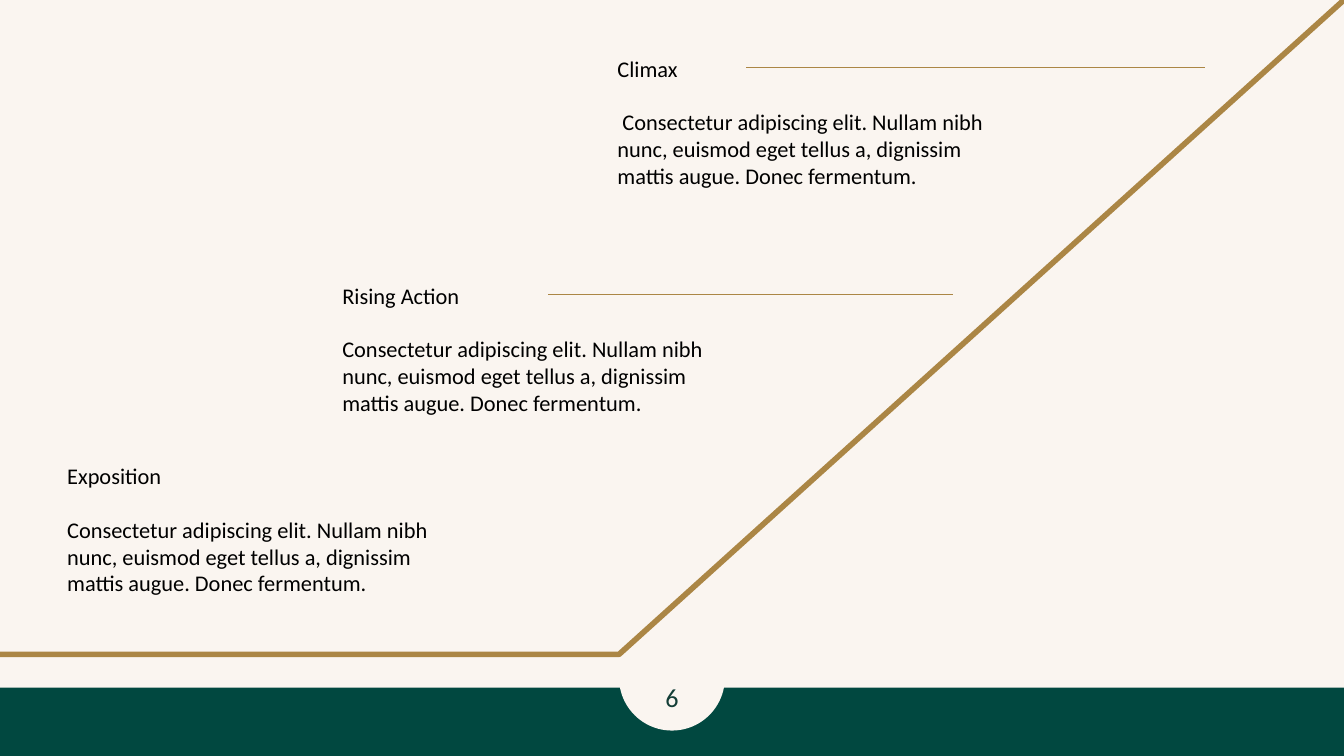
from dataclasses import dataclass
from typing import Optional

from pptx import Presentation
from pptx.dml.color import RGBColor
from pptx.enum.shapes import MSO_CONNECTOR as Connector, MSO_SHAPE as Preset
from pptx.enum.text import MSO_ANCHOR as Anchor, PP_ALIGN as Align
from pptx.oxml.ns import qn
from pptx.slide import Slide
from pptx.util import Cm, Pt
from lxml.etree import SubElement


@dataclass(frozen=True)
class Theme:
    green: RGBColor = RGBColor.from_string("014840")
    cream: RGBColor = RGBColor.from_string("FAF5F0")
    gold: RGBColor = RGBColor.from_string("AB8645")
    ink: RGBColor = RGBColor.from_string("000000")
    number_ink: RGBColor = RGBColor.from_string("133E37")
    font: str = "Calibri"
    text_size: float = 12
    number_size: float = 14
    rule_width: float = 0.75
    plot_width: float = 3


@dataclass(frozen=True)
class Rule:
    start: float
    end: float


@dataclass(frozen=True)
class Stage:
    heading: str
    body: str
    top: float
    rule: Optional[Rule] = None


THEME = Theme()
WIDTH, HEIGHT = 25.4, 14.29
PANEL_HEIGHT = 13
BADGE = 2
BADGE_LEFT = (WIDTH - BADGE) / 2
BASELINE = 12.37
STAGE_LEFT, STAGE_STEP, STAGE_WIDTH = 1.02, 5.2, 8.13
HEADING_HEIGHT, BODY_HEIGHT = 1.04, 2.11
RULE_OFFSET = 0.52
INSET = 0.25

BODY = (
    "Consectetur adipiscing elit. Nullam nibh nunc, euismod eget tellus a, "
    "dignissim mattis augue. Donec fermentum."
)
STAGES = [
    Stage("Exposition", BODY, 8.46),
    Stage("Rising Action", BODY, 5.05, Rule(10.36, 18.01)),
    Stage("Climax", f" {BODY}", 0.76, Rule(14.1, 22.78)),
]


def add_panel(slide: Slide, preset: Preset, left: float, top: float,
              width: float, height: float) -> None:
    panel = slide.shapes.add_shape(preset, Cm(left), Cm(top), Cm(width), Cm(height))
    panel.shadow.inherit = False
    panel.fill.solid()
    panel.fill.fore_color.rgb = THEME.cream
    panel.line.fill.background()


def add_text(slide: Slide, text: str, left: float, top: float, width: float,
             height: float, anchor: Anchor = Anchor.TOP, align: Align = Align.LEFT,
             size: float = THEME.text_size, color: RGBColor = THEME.ink) -> None:
    frame = slide.shapes.add_textbox(Cm(left), Cm(top), Cm(width), Cm(height)).text_frame
    frame.word_wrap = True
    frame.vertical_anchor = anchor
    frame.margin_left = frame.margin_right = Cm(INSET)
    frame.margin_top = frame.margin_bottom = Cm(INSET)
    paragraph = frame.paragraphs[0]
    paragraph.text = text
    paragraph.alignment = align
    paragraph.font.name = THEME.font
    paragraph.font.size = Pt(size)
    paragraph.font.color.rgb = color


def add_rule(slide: Slide, rule: Rule, y: float) -> None:
    connector = slide.shapes.add_connector(
        Connector.STRAIGHT, Cm(rule.start), Cm(y), Cm(rule.end), Cm(y))
    connector.line.color.rgb = THEME.gold
    connector.line.width = Pt(THEME.rule_width)
    SubElement(connector.element.spPr, qn("a:effectLst"))


def add_plot_line(slide: Slide) -> None:
    builder = slide.shapes.build_freeform(Cm(0), Cm(BASELINE))
    builder.add_line_segments(
        [(Cm(BADGE_LEFT), Cm(BASELINE)), (Cm(WIDTH), Cm(0))], close=False)
    plot = builder.convert_to_shape()
    plot.shadow.inherit = False
    plot.fill.background()
    plot.line.color.rgb = THEME.gold
    plot.line.width = Pt(THEME.plot_width)


def add_stage(slide: Slide, stage: Stage, left: float) -> None:
    add_text(slide, stage.heading, left, stage.top, STAGE_WIDTH, HEADING_HEIGHT,
             anchor=Anchor.BOTTOM)
    add_text(slide, stage.body, left, stage.top + HEADING_HEIGHT, STAGE_WIDTH, BODY_HEIGHT)
    if stage.rule:
        add_rule(slide, stage.rule, stage.top + RULE_OFFSET)


def main() -> None:
    deck = Presentation()
    deck.slide_width, deck.slide_height = Cm(WIDTH), Cm(HEIGHT)
    slide = deck.slides.add_slide(deck.slide_layouts[6])
    slide.background.fill.solid()
    slide.background.fill.fore_color.rgb = THEME.green

    add_panel(slide, Preset.RECTANGLE, 0, 0, WIDTH, PANEL_HEIGHT)
    add_panel(slide, Preset.OVAL, BADGE_LEFT, 11.81, BADGE, BADGE)
    add_text(slide, "6", BADGE_LEFT, 12.6, BADGE, 1.17, Anchor.MIDDLE, Align.CENTER,
             THEME.number_size, THEME.number_ink)
    add_plot_line(slide)
    for index, stage in enumerate(STAGES):
        add_stage(slide, stage, STAGE_LEFT + index * STAGE_STEP)

    deck.save("out.pptx")


if __name__ == "__main__":
    main()
